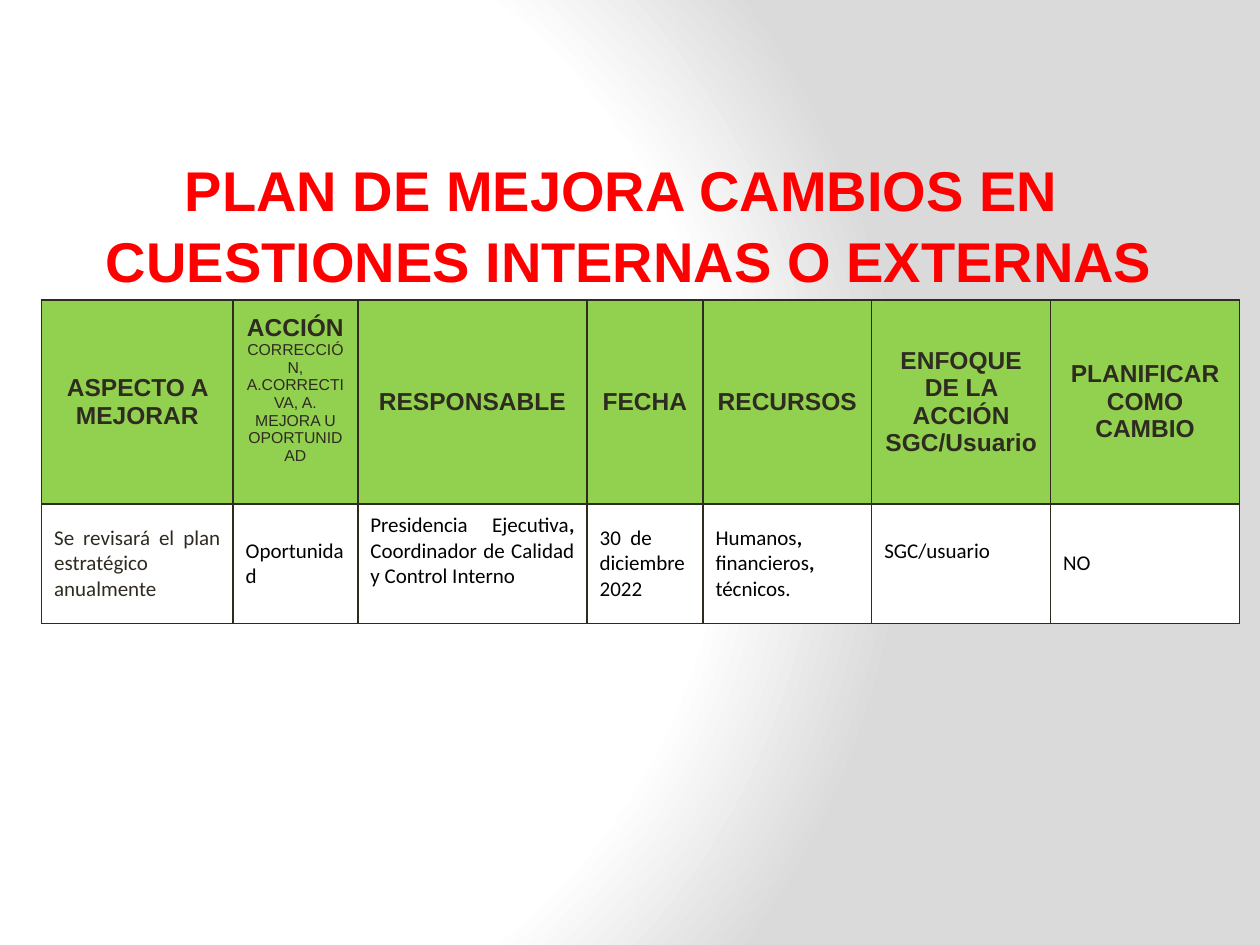
import pptx
import pptx.util
import pptx.oxml
import pptx.oxml.ns
import pptx.dml.color
import pptx.enum.text
from lxml import etree

Pt, Inches = pptx.util.Pt, pptx.util.Inches
qn = pptx.oxml.ns.qn
ALIGN = pptx.enum.text.PP_ALIGN
MIDDLE = pptx.enum.text.MSO_ANCHOR.MIDDLE

COLORS = {"title": "FF0000", "dark": "2F2B20", "black": "000000",
          "header": "92D050", "white": "FFFFFF", "gray": "DADADA"}
LEFT, TOP = 0.33, 2.38
COL_WIDTHS = [1.52, 0.99, 1.82, 0.92, 1.34, 1.42, 1.5]
ROW_HEIGHTS = [1.62, 0.95]
RAISED = {(0, 1), (1, 2), (1, 5)}  # cells whose text sits above the middle

# Header cells: one entry per paragraph
HEADERS = [
    ["ASPECTO A MEJORAR"],
    ["ACCIÓN", "CORRECCIÓN, A.CORRECTIVA, A. MEJORA U OPORTUNIDAD"],
    ["RESPONSABLE"],
    ["FECHA"],
    ["RECURSOS"],
    ["ENFOQUE DE LA ACCIÓN", "SGC/Usuario"],
    ["PLANIFICAR COMO CAMBIO"],
]
# Body cells: alignment, colour, items joined by bold commas
BODY = [
    (ALIGN.JUSTIFY, "dark", ["Se revisará el plan estratégico anualmente"]),
    (ALIGN.JUSTIFY, "black", ["Oportunidad"]),
    (ALIGN.JUSTIFY, "black", ["Presidencia Ejecutiva",
                              "Coordinador de Calidad y Control Interno"]),
    (ALIGN.LEFT, "black", ["30  de diciembre 2022"]),
    (ALIGN.JUSTIFY, "black", ["Humanos", "financieros", "técnicos."]),
    (ALIGN.LEFT, "black", ["SGC/usuario"]),
    (ALIGN.LEFT, "black", ["NO"]),
]


def rgb(name):
    return pptx.dml.color.RGBColor.from_string(COLORS[name])


def add_run(p, text, size, font, color, bold):
    r = p.add_run()
    r.text = text
    r.font.size = Pt(size)
    r.font.name = font
    r.font.bold = bold
    r.font.color.rgb = rgb(color)


def set_background(s):
    s.background.fill.solid()
    bg = s.element.find(".//" + qn("p:bgPr"))
    stops = "".join(
        f'<a:gs pos="{pos * 1000}"><a:srgbClr val="{COLORS[c]}"/></a:gs>'
        for pos, c in [(0, "white"), (75, "white"), (100, "gray")])
    grad = pptx.oxml.parse_xml(
        f'<a:gradFill {pptx.oxml.ns.nsdecls("a")} rotWithShape="1">'
        f'<a:gsLst>{stops}</a:gsLst><a:path path="circle">'
        '<a:fillToRect l="20000" t="50000" r="100000" b="50000"/>'
        '</a:path></a:gradFill>')
    bg.replace(bg.find(qn("a:solidFill")), grad)


def set_title(s, lines):
    sp = s.shapes.title
    sp.left, sp.top, sp.width, sp.height = map(Inches, (LEFT, 1.19, 9.33, 1.18))
    tf = sp.text_frame
    tf.word_wrap = True
    tf.vertical_anchor = MIDDLE
    tf.auto_size = pptx.enum.text.MSO_AUTO_SIZE.SHAPE_TO_FIT_TEXT
    for i, line in enumerate(lines):
        p = tf.add_paragraph() if i else tf.paragraphs[0]
        p.alignment = ALIGN.CENTER
        p.space_before = Pt(2)
        pPr = p._p.get_or_add_pPr()
        pPr.set("marL", str(Inches(0.25)))
        pPr.set("indent", str(Inches(-0.25)))
        add_run(p, line, 32, "Arial", "title", True)


def set_borders(cell):
    tcPr = cell._tc.get_or_add_tcPr()
    for i, side in enumerate(("lnL", "lnR", "lnT", "lnB")):
        ln = etree.Element(qn("a:" + side), w=str(Pt(1)))
        fill = etree.SubElement(ln, qn("a:solidFill"))
        etree.SubElement(fill, qn("a:srgbClr"), val=COLORS["dark"])
        tcPr.insert(i, ln)


def fill_header(cell, lines):
    for i, line in enumerate(lines):
        p = cell.text_frame.add_paragraph() if i else cell.text_frame.paragraphs[0]
        p.alignment = ALIGN.CENTER
        note = line.startswith("CORRECCIÓN")
        add_run(p, line, 9 if note else 14, "Arial", "dark", not note)


def fill_body(cell, align, color, items):
    p = cell.text_frame.paragraphs[0]
    p.alignment = align
    for i, item in enumerate(items):
        if i:
            add_run(p, ", ", 12, "Calibri", color, True)
        add_run(p, item, 12, "Calibri", color, False)


def add_plan_table(s):
    table = s.shapes.add_table(
        len(ROW_HEIGHTS), len(COL_WIDTHS), Inches(LEFT), Inches(TOP),
        Inches(sum(COL_WIDTHS)), Inches(sum(ROW_HEIGHTS))).table
    for col, width in zip(table.columns, COL_WIDTHS):
        col.width = Inches(width)
    for row, height in zip(table.rows, ROW_HEIGHTS):
        row.height = Inches(height)
    for c, (header, body) in enumerate(zip(HEADERS, BODY)):
        fill_header(table.cell(0, c), header)
        fill_body(table.cell(1, c), *body)
        for r, color in enumerate(("header", "white")):
            cell = table.cell(r, c)
            cell.vertical_anchor = MIDDLE
            cell.fill.solid()
            cell.fill.fore_color.rgb = rgb(color)
            if (r, c) in RAISED:
                cell.margin_bottom = Inches(0.25)
            set_borders(cell)


def main():
    prs = pptx.Presentation()
    prs.slide_width, prs.slide_height = Inches(10), Inches(7.5)
    s = prs.slides.add_slide(prs.slide_layouts[5])  # title only
    set_background(s)
    set_title(s, ["PLAN DE MEJORA CAMBIOS EN ", "CUESTIONES INTERNAS O EXTERNAS"])
    add_plan_table(s)
    prs.save("out.pptx")


if __name__ == "__main__":
    main()
